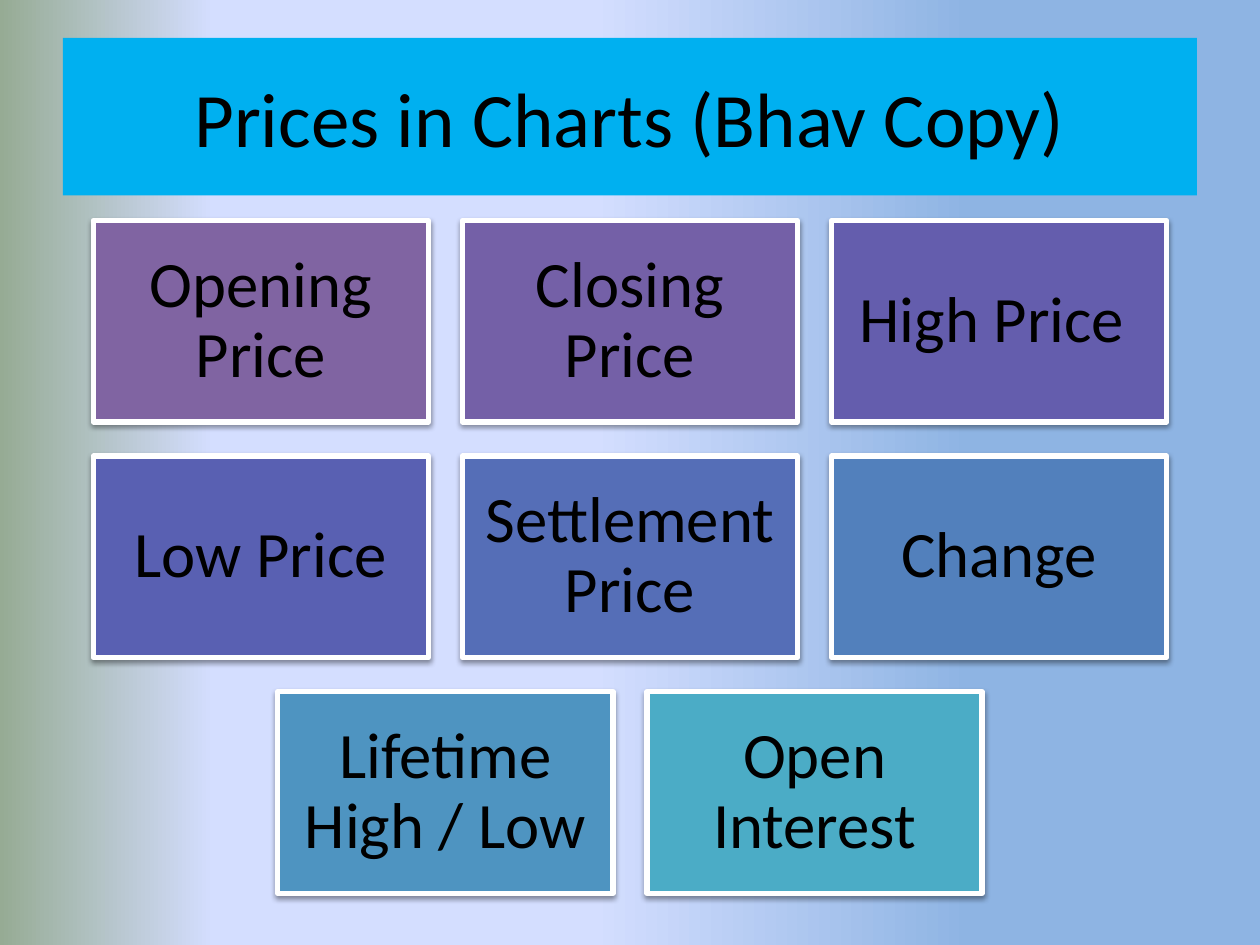
from lxml import etree
from pptx import Presentation
from pptx.dml.color import RGBColor
from pptx.enum.shapes import MSO_SHAPE
from pptx.enum.text import MSO_ANCHOR, PP_ALIGN
from pptx.oxml import parse_xml
from pptx.oxml.ns import nsdecls, qn
from pptx.util import Inches, Pt

RECTANGLE = MSO_SHAPE.RECTANGLE
MIDDLE = MSO_ANCHOR.MIDDLE
CENTER = PP_ALIGN.CENTER

SLIDE_WIDTH, SLIDE_HEIGHT = 10, 7.5
CARD_WIDTH, CARD_HEIGHT, CARD_GAP = 2.66, 1.6, 0.27
CARDS_TOP = 1.75

BACKGROUND_STOPS = [(23, "8EB4E3"), (53, "D4DEFF"), (83, "D4DEFF"), (100, "96AB94")]

# Each row of cards is centred on the slide
CARD_ROWS = [
    [("Opening Price", "8064A2"), ("Closing Price", "7460A7"), ("High Price ", "645DAD")],
    [("Low Price", "5960B2"), ("Settlement Price", "556EB7"), ("Change", "5280BC")],
    [("Lifetime High / Low", "4E94C1"), ("Open Interest", "4BACC6")],
]


def color(hex_string):
    return RGBColor.from_string(hex_string)


def set_background(slide, stops, angle):
    stop_xml = "".join(
        f'<a:gs pos="{position * 1000}"><a:srgbClr val="{value}"/></a:gs>'
        for position, value in stops
    )
    background = parse_xml(
        f'<p:bg {nsdecls("p", "a")}><p:bgPr><a:gradFill rotWithShape="1">'
        f'<a:gsLst>{stop_xml}</a:gsLst><a:lin ang="{angle * 60000}" scaled="0"/>'
        "</a:gradFill><a:effectLst/></p:bgPr></p:bg>"
    )
    slide.element.cSld.insert(0, background)


def add_rectangle(slide, left, top, width, height, fill):
    shape = slide.shapes.add_shape(
        RECTANGLE, Inches(left), Inches(top), Inches(width), Inches(height)
    )
    shape.shadow.inherit = False
    shape.fill.solid()
    shape.fill.fore_color.rgb = color(fill)
    shape.line.fill.background()
    return shape


def set_text(shape, text, size, margin=0.1, line_spacing=1.0, font="Calibri", fill="000000"):
    frame = shape.text_frame
    frame.word_wrap = True
    frame.vertical_anchor = MIDDLE
    frame.margin_left = frame.margin_right = Inches(margin)
    frame.margin_top = frame.margin_bottom = Inches(margin)
    paragraph = frame.paragraphs[0]
    paragraph.alignment = CENTER
    paragraph.line_spacing = line_spacing
    run = paragraph.add_run()
    run.text = text
    run.font.size = Pt(size)
    run.font.name = font
    run.font.color.rgb = color(fill)


def add_shadow(shape, blur=3.1, distance=1.6, angle=90, opacity=38):
    effects = shape.element.spPr.find(qn("a:effectLst"))
    shadow = etree.SubElement(
        effects, qn("a:outerShdw"), blurRad=str(Pt(blur)), dist=str(Pt(distance)),
        dir=str(angle * 60000), rotWithShape="0",
    )
    shade = etree.SubElement(shadow, qn("a:srgbClr"), val="000000")
    etree.SubElement(shade, qn("a:alpha"), val=str(opacity * 1000))


def add_card(slide, left, top, text, fill):
    card = add_rectangle(slide, left, top, CARD_WIDTH, CARD_HEIGHT, fill)
    card.line.color.rgb = color("FFFFFF")
    card.line.width = Pt(3)
    etree.SubElement(card.line._get_or_add_ln(), qn("a:round"))
    add_shadow(card)
    set_text(card, text, 37, margin=0.15, line_spacing=0.9)


def main():
    presentation = Presentation()
    presentation.slide_width = Inches(SLIDE_WIDTH)
    presentation.slide_height = Inches(SLIDE_HEIGHT)
    slide = presentation.slides.add_slide(presentation.slide_layouts[6])
    set_background(slide, BACKGROUND_STOPS, angle=180)

    # Title band
    title = add_rectangle(slide, 0.5, 0.3, 9, 1.25, "00B0F0")
    set_text(title, "Prices in Charts (Bhav Copy)", 44)

    # Price cards
    for row_index, row in enumerate(CARD_ROWS):
        row_width = len(row) * (CARD_WIDTH + CARD_GAP) - CARD_GAP
        row_left = (SLIDE_WIDTH - row_width) / 2
        top = CARDS_TOP + row_index * (CARD_HEIGHT + CARD_GAP)
        for column, (text, fill) in enumerate(row):
            add_card(slide, row_left + column * (CARD_WIDTH + CARD_GAP), top, text, fill)

    presentation.save("out.pptx")


if __name__ == "__main__":
    main()
